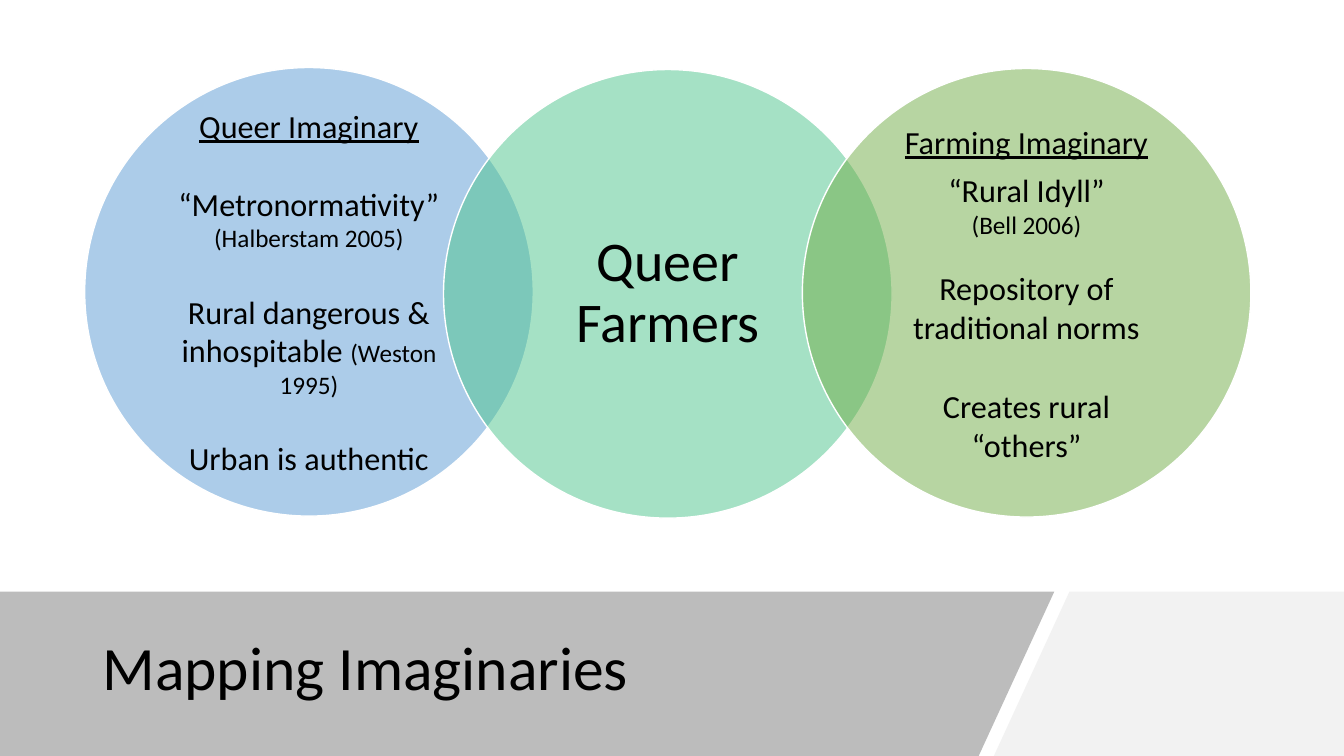
from lxml import etree
from pptx import Presentation
from pptx.dml.color import RGBColor
from pptx.enum.shapes import MSO_SHAPE
from pptx.enum.text import MSO_ANCHOR as ANCHOR, PP_ALIGN as ALIGN
from pptx.oxml.ns import qn
from pptx.util import Pt

WIDTH, HEIGHT = 960, 540
FONT, BLACK, WHITE = "Calibri", "000000", "FFFFFF"
TITLE = "Mapping Imaginaries"

# Each circle: fill, top, line spacing, paragraphs of (space before, runs);
# each run: text, size, underlined
CIRCLES = [
    ("5B9BD5", 48.24, 1, [
        (0, [("Queer Imaginary", 23, True)]),
        (28, [("“Metronormativity” ", 23, False), ("(Halberstam 2005)", 18, False)]),
        (28, [("Rural dangerous & inhospitable ", 23, False), ("(Weston 1995)", 18, False)]),
        (28, [("Urban is authentic", 23, False)]),
    ]),
    ("4DC58D", 49.68, 0.9, [
        (0, [("Queer Farmers", 40, False)]),
    ]),
    ("70AD47", 48.96, 1, [
        (0, [("Farming Imaginary", 23, True)]),
        (7, [("“Rural Idyll”", 23, False)]),
        (0, [("(Bell 2006)", 18, False)]),
        (21, [("Repository of traditional norms", 23, False)]),
        (29, [("Creates rural “others”", 23, False)]),
    ]),
]
CIRCLE_LEFT, CIRCLE_STEP, DIAMETER = 60.5, 256.3, 320.4

BAND_TOP, BAND_RIGHT, BAND_SLANT, BAND_GAP = 422.6, 753.1, 54, 10.8


def rgb(color):
    return RGBColor.from_string(color)


def paint(sp, color, opacity=100):
    """Fill a shape, with opacity in percent, and remove its shadow."""
    sp.shadow.inherit = False
    sp.fill.solid()
    sp.fill.fore_color.rgb = rgb(color)
    if opacity < 100:
        clr = sp.fill._xPr.find(qn("a:solidFill"))[0]
        etree.SubElement(clr, qn("a:alpha")).set("val", str(opacity * 1000))


def style(r, size, underlined=False):
    r.font.name, r.font.size = FONT, Pt(size)
    r.font.color.rgb = rgb(BLACK)
    if underlined:
        r.font.underline = True


def add_band(shapes, points, color, opacity=100):
    (x, y), *rest = [(Pt(px), Pt(py)) for px, py in points]
    builder = shapes.build_freeform(x, y)
    builder.add_line_segments(rest, close=True)
    sp = builder.convert_to_shape()
    paint(sp, color, opacity)
    sp.line.fill.background()


def add_circle(shapes, left, top, color, spacing, paragraphs):
    sp = shapes.add_shape(MSO_SHAPE.OVAL, Pt(left), Pt(top), Pt(DIAMETER), Pt(DIAMETER))
    paint(sp, color, 50)
    sp.line.color.rgb, sp.line.width = rgb(WHITE), Pt(1)
    tf = sp.text_frame
    tf.word_wrap, tf.vertical_anchor = True, ANCHOR.MIDDLE
    tf.margin_left = tf.margin_right = Pt(18)
    tf.margin_top = tf.margin_bottom = Pt(2)
    for i, (gap, runs) in enumerate(paragraphs):
        p = tf.add_paragraph() if i else tf.paragraphs[0]
        p.alignment, p.line_spacing, p.space_before = ALIGN.CENTER, spacing, Pt(gap)
        for text, size, underlined in runs:
            r = p.add_run()
            r.text = text
            style(r, size, underlined)


def main():
    prs = Presentation()
    prs.slide_width, prs.slide_height = Pt(WIDTH), Pt(HEIGHT)
    slide = prs.slides.add_slide(prs.slide_layouts[5])
    shapes = slide.shapes

    light_left = BAND_RIGHT + BAND_GAP
    add_band(shapes, [(light_left, BAND_TOP), (WIDTH, BAND_TOP), (WIDTH, HEIGHT),
                      (light_left - BAND_SLANT, HEIGHT)], "F2F2F2")
    add_band(shapes, [(0, BAND_TOP), (BAND_RIGHT, BAND_TOP),
                      (BAND_RIGHT - BAND_SLANT, HEIGHT), (0, HEIGHT)], "595959", 40)

    title = shapes.title
    title.left, title.top, title.width, title.height = Pt(66), Pt(435.6), Pt(636), Pt(86.4)
    tf = title.text_frame
    tf.text, tf.vertical_anchor = TITLE, ANCHOR.MIDDLE
    p = tf.paragraphs[0]
    p.alignment, p.line_spacing = ALIGN.LEFT, 0.9
    style(p.runs[0], 44)
    # Bring the title in front of the bands
    shapes._spTree.append(title._element)

    for i, (color, top, spacing, paragraphs) in enumerate(CIRCLES):
        add_circle(shapes, CIRCLE_LEFT + i * CIRCLE_STEP, top, color, spacing, paragraphs)

    prs.save("out.pptx")


if __name__ == "__main__":
    main()
